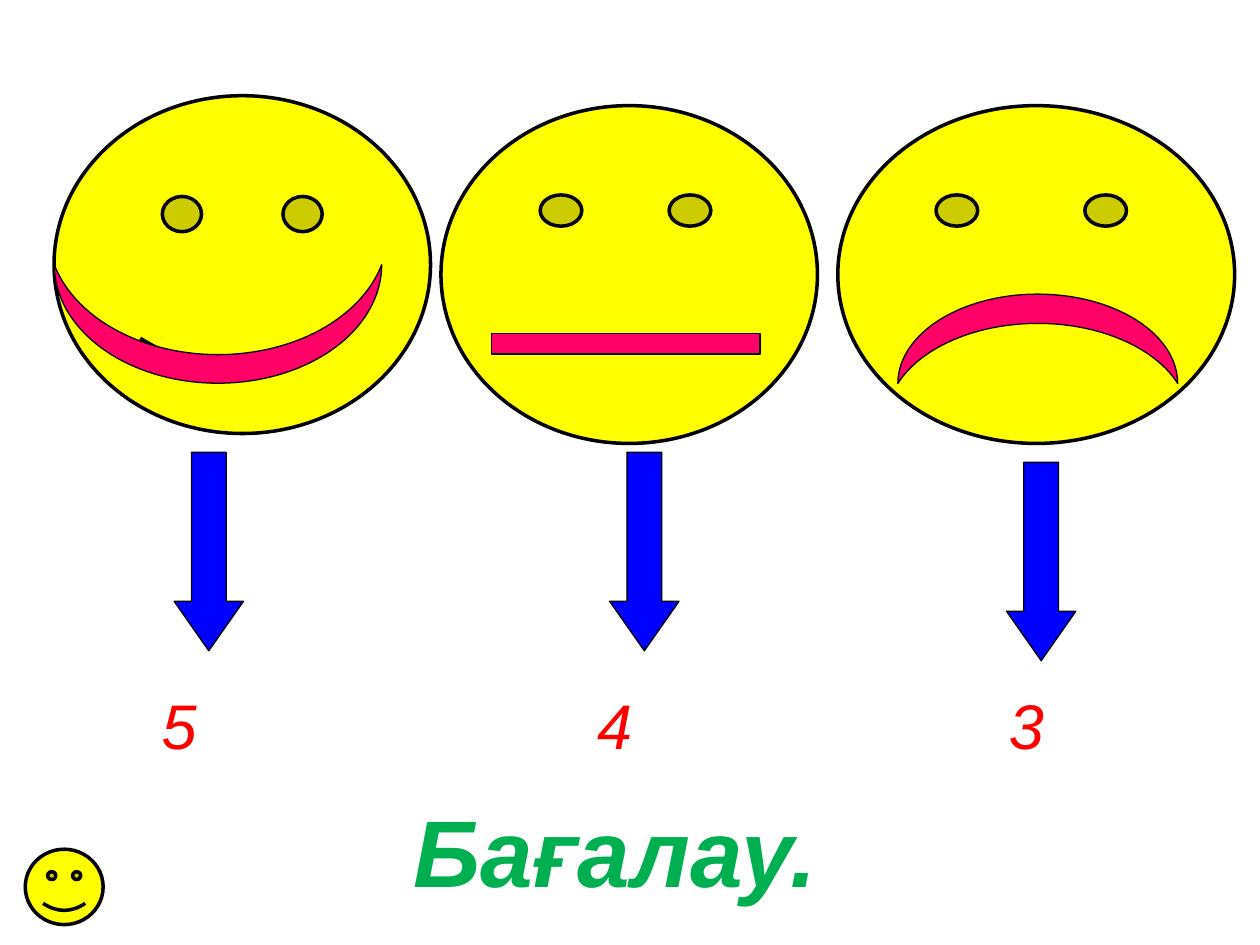
from dataclasses import dataclass

from pptx import Presentation
from pptx.dml.color import RGBColor
from pptx.enum.shapes import MSO_SHAPE
from pptx.enum.text import MSO_ANCHOR, PP_ALIGN
from pptx.util import Cm, Pt

SMILEY = MSO_SHAPE.SMILEY_FACE
OVAL = MSO_SHAPE.OVAL
MOON = MSO_SHAPE.MOON
RECT = MSO_SHAPE.RECTANGLE
ARROW = MSO_SHAPE.DOWN_ARROW
CENTER = PP_ALIGN.CENTER
MIDDLE = MSO_ANCHOR.MIDDLE
TITLE_ONLY = 5


@dataclass(frozen=True)
class Theme:
    font: str = "Arial"
    face: str = "FFFF00"
    eye: str = "CCCC00"
    mouth: str = "FF0066"
    arrow: str = "0000FF"
    outline: str = "000000"
    grade: str = "FF0000"
    title: str = "00B050"
    grade_size: int = 36
    title_size: int = 54
    thick: float = 2
    thin: float = 0.75


THEME = Theme()


def rgb(value):
    return RGBColor.from_string(value)


def add_shape(s, kind, box, fill, weight, adj=(), rotation=0):
    sp = s.shapes.add_shape(kind, *map(Cm, box))
    sp.shadow.inherit = False
    sp.fill.solid()
    sp.fill.fore_color.rgb = rgb(fill)
    sp.line.color.rgb = rgb(THEME.outline)
    sp.line.width = Pt(weight)
    sp.rotation = rotation
    for i, value in enumerate(adj):
        sp.adjustments[i] = value
    return sp


def set_text(sp, text, size, color, bold=False, wrap=True):
    tf = sp.text_frame
    tf.word_wrap = wrap
    tf.vertical_anchor = MIDDLE
    p = tf.paragraphs[0]
    p.alignment = CENTER
    r = p.add_run()
    r.text = text
    r.font.name = THEME.font
    r.font.size = Pt(size)
    r.font.bold = bold
    r.font.italic = True
    r.font.color.rgb = rgb(color)


def draw_smiley(s, box):
    add_shape(s, SMILEY, box, THEME.face, THEME.thick, adj=(0.0465,))


def draw_happy_face(s, box):
    x, y = box[:2]
    draw_smiley(s, box)
    add_shape(s, MOON, (x + 2.11, y + 1.3, 2.39, 6.6), THEME.mouth,
              THEME.thin, adj=(0.241,), rotation=270)


def draw_oval_face(s, box, eye_offsets):
    x, y = box[:2]
    add_shape(s, OVAL, box, THEME.face, THEME.thick)
    for dx in eye_offsets:
        add_shape(s, OVAL, (x + dx, y + 1.8, 0.84, 0.63), THEME.eye, THEME.thick)


def draw_neutral_face(s, box):
    x, y = box[:2]
    draw_oval_face(s, box, (2, 4.6))
    add_shape(s, RECT, (x + 1.02, y + 4.6, 5.41, 0.41), THEME.mouth, THEME.thin)


def draw_sad_face(s, box):
    x, y = box[:2]
    draw_oval_face(s, box, (1.98, 4.98))
    add_shape(s, MOON, (x + 3.13, y + 1.88, 1.8, 5.64), THEME.mouth,
              THEME.thin, adj=(0.328,), rotation=90)


def draw_grade(s, box, text, shift):
    x, y, w, h = box
    add_shape(s, ARROW, box, THEME.arrow, THEME.thin, adj=(0.5, 0.713))
    label_w, label_h, label_y = 2.6, 2.2, 13.51
    label_x = x + (w - label_w) / 2 + shift
    sp = s.shapes.add_textbox(*map(Cm, (label_x, label_y, label_w, label_h)))
    set_text(sp, text, THEME.grade_size, THEME.grade, wrap=False)


def draw_title(s, box, text):
    sp = s.shapes.title
    sp.left, sp.top, sp.width, sp.height = map(Cm, box)
    set_text(sp, text, THEME.title_size, THEME.title, bold=True)


def main():
    prs = Presentation()
    prs.slide_width, prs.slide_height = Cm(25.4), Cm(19.05)
    s = prs.slides.add_slide(prs.slide_layouts[TITLE_ONLY])

    draw_happy_face(s, (1.09, 1.93, 7.59, 6.81))
    draw_neutral_face(s, (8.89, 2.13, 7.59, 6.81))
    draw_sad_face(s, (16.89, 2.13, 8, 6.81))

    grades = (("5", 3.51, 9.12, -0.6), ("4", 12.29, 9.12, -0.6),
              ("3", 20.29, 9.32, -0.3))
    for text, x, y, shift in grades:
        draw_grade(s, (x, y, 1.4, 4), text, shift)

    draw_smiley(s, (0.51, 17.12, 1.57, 1.52))
    draw_title(s, (2.97, 15.85, 18.87, 2.57), "Бағалау.")
    prs.save("out.pptx")


if __name__ == "__main__":
    main()
